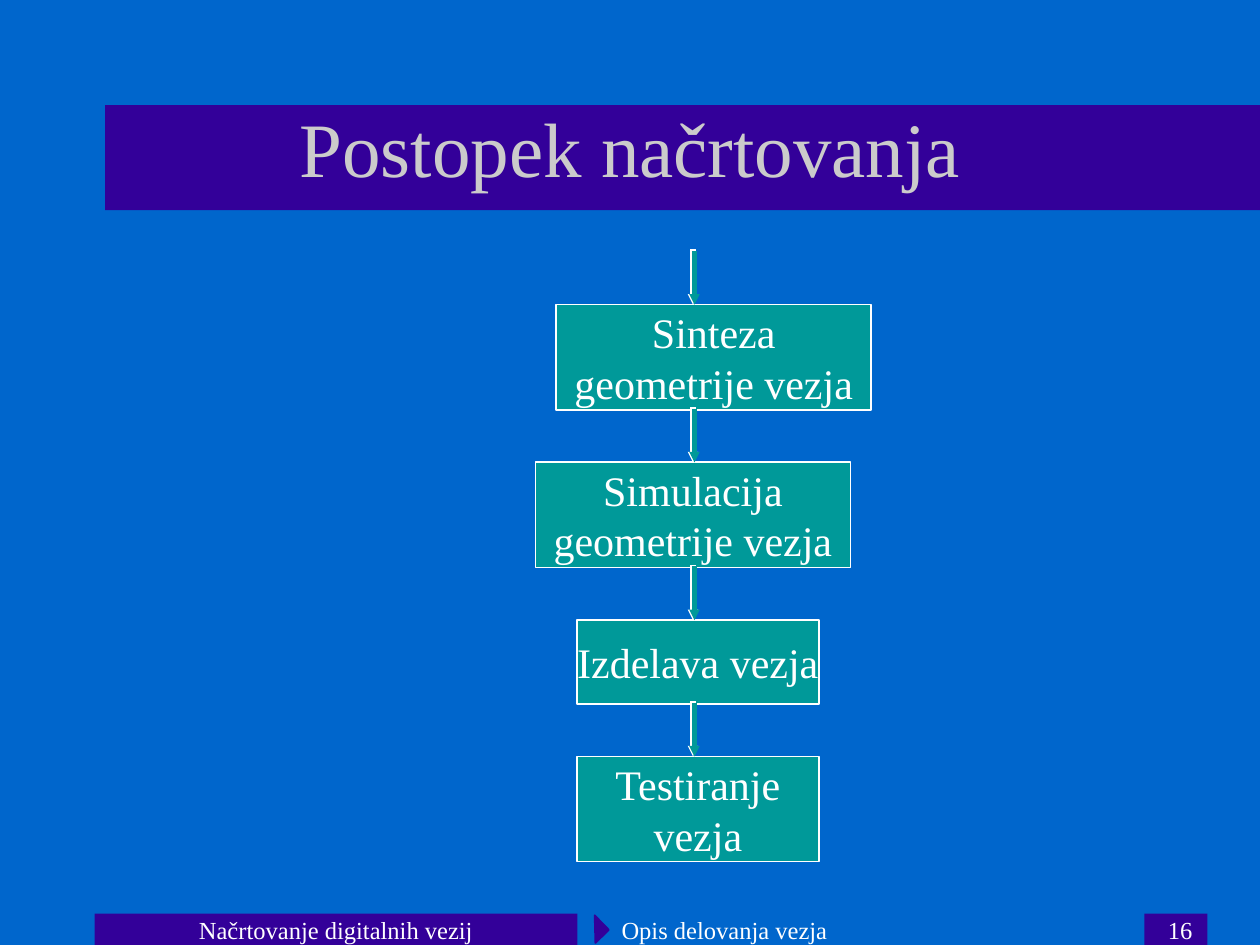
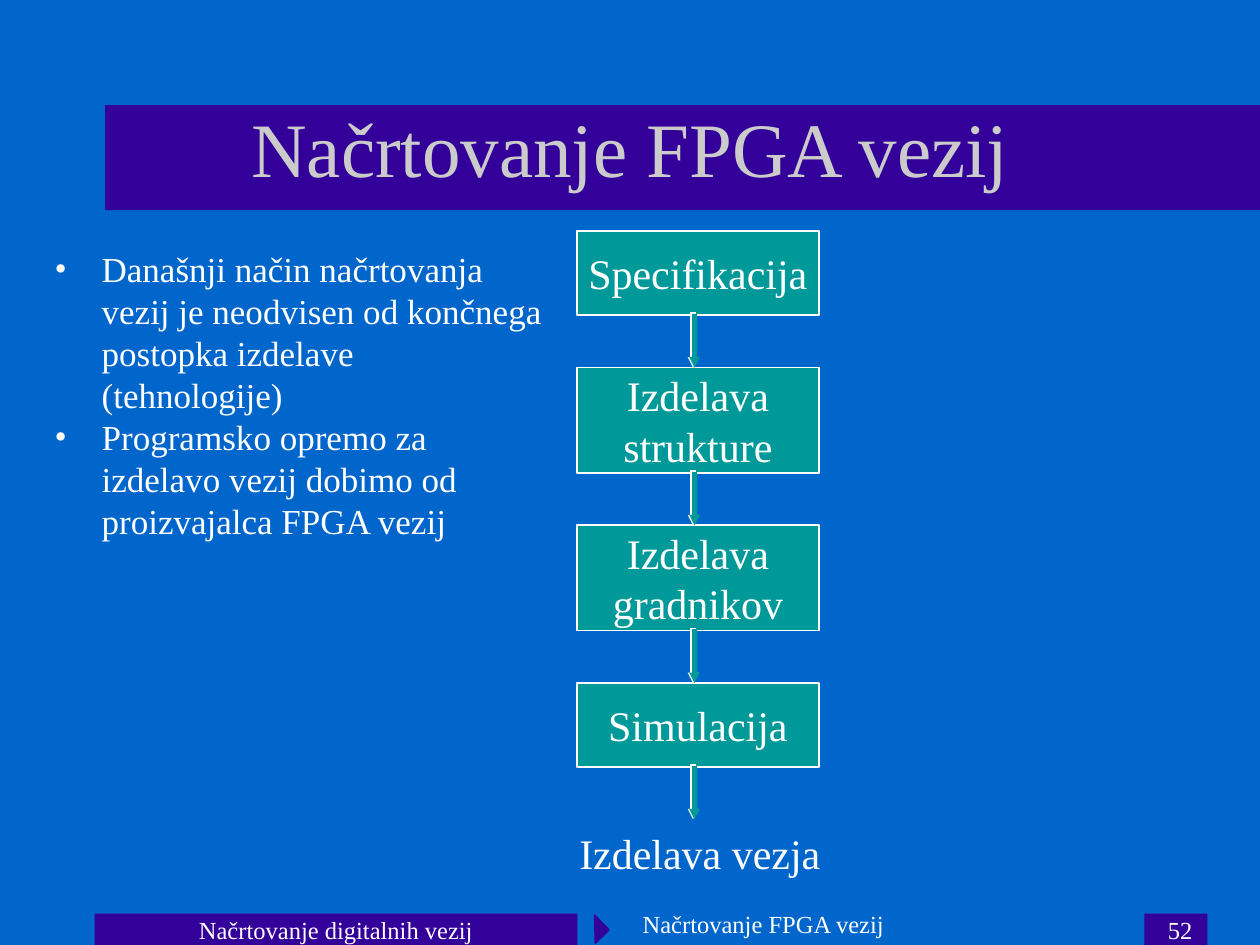
from dataclasses import dataclass

from lxml.etree import SubElement
from pptx import Presentation
from pptx.dml.color import RGBColor
from pptx.enum.shapes import MSO_CONNECTOR, MSO_SHAPE
from pptx.enum.text import MSO_ANCHOR, PP_ALIGN
from pptx.oxml.ns import qn
from pptx.shapes.autoshape import Shape
from pptx.shapes.connector import Connector
from pptx.slide import Slide
from pptx.text.text import TextFrame
from pptx.util import Cm, Pt

FONT = "Times New Roman"
BLUE, VIOLET, TEAL = "0066CC", "330099", "009999"
WHITE, GREY = "FFFFFF", "CBCBCB"
LEFT, MID, RIGHT = PP_ALIGN.LEFT, PP_ALIGN.CENTER, PP_ALIGN.RIGHT
AXIS = 13.97
GAP = 1.06
SHIFT = 0.03
INDENT = 0.95
HEIGHTS = {1: 1.69, 2: 2.12}


@dataclass(frozen=True)
class Area:
    """A place on the slide in centimetres."""

    left: float
    top: float
    width: float
    height: float


@dataclass(frozen=True)
class Step:
    """One box of the flow, placed by its centre line."""

    text: str
    mid: float = 14.07
    width: float = 4.87


@dataclass(frozen=True)
class Label:
    """A text with its place and format."""

    text: str
    area: Area
    size: int = 14
    color: str = WHITE
    align: PP_ALIGN = MID
    anchor: MSO_ANCHOR = MSO_ANCHOR.MIDDLE
    wrap: bool = True
    bullet: bool = False


BANDS = (
    Area(23.07, 18.42, 1.27, 0.63),
    Area(1.91, 18.42, 9.73, 0.63),
    Area(2.12, 2.12, 23.28, 2.12),
)
MARK = Area(11.79, 18.54, 0.41, 0.38)


def rgb(code: str) -> RGBColor:
    """Turn a hex string into a colour."""
    return RGBColor.from_string(code)


def span(area: Area) -> tuple[Cm, Cm, Cm, Cm]:
    """Give the lengths that python-pptx expects."""
    return Cm(area.left), Cm(area.top), Cm(area.width), Cm(area.height)


def write(frame: TextFrame, text: str, *, size: int, color: str = WHITE,
          align: PP_ALIGN = MID, anchor: MSO_ANCHOR = MSO_ANCHOR.MIDDLE,
          wrap: bool = True, bullet: bool = False) -> None:
    """Fill a frame with one paragraph for each line of text."""
    frame.word_wrap = wrap
    frame.vertical_anchor = anchor
    for rank, line in enumerate(text.split("\n")):
        para = frame.add_paragraph() if rank else frame.paragraphs[0]
        para.alignment = align
        run = para.add_run()
        run.text = line
        run.font.name = FONT
        run.font.size = Pt(size)
        run.font.color.rgb = rgb(color)
        if bullet:
            props = para._p.get_or_add_pPr()
            props.set("marL", str(Cm(INDENT)))
            props.set("indent", str(-Cm(INDENT)))
            SubElement(props, qn("a:buFont"), typeface=FONT)
            SubElement(props, qn("a:buChar"), char="•")


def add_label(slide: Slide, label: Label) -> None:
    """Place a text box."""
    frame = slide.shapes.add_textbox(*span(label.area)).text_frame
    write(frame, label.text, size=label.size, color=label.color,
          align=label.align, anchor=label.anchor, wrap=label.wrap,
          bullet=label.bullet)


def add_form(slide: Slide, area: Area, fill: str, line: str | None = None,
             kind: MSO_SHAPE = MSO_SHAPE.RECTANGLE) -> Shape:
    """Draw a flat preset shape."""
    form = slide.shapes.add_shape(kind, *span(area))
    form.shadow.inherit = False
    form.fill.solid()
    form.fill.fore_color.rgb = rgb(fill)
    if line:
        form.line.color.rgb = rgb(line)
        form.line.width = Pt(1)
    else:
        form.line.fill.background()
    return form


def add_line(slide: Slide, top: float, shift: float, color: str) -> Connector:
    """Draw a downward arrow on the axis."""
    side = Cm(AXIS + shift)
    link = slide.shapes.add_connector(
        MSO_CONNECTOR.STRAIGHT, side, Cm(top + shift), side, Cm(top + GAP))
    link.line.color.rgb = rgb(color)
    link.line.width = Pt(3)
    line = link.line._get_or_add_ln()
    line.set("cap", "sq")
    SubElement(line, qn("a:tailEnd"), type="triangle", w="sm", len="sm")
    SubElement(link._element.spPr, qn("a:effectLst"))
    return link


def add_arrow(slide: Slide, top: float, start: Shape | None,
              end: Shape | None) -> None:
    """Draw a white arrow with a teal one on it."""
    link = add_line(slide, top, 0, WHITE)
    if start:
        link.begin_connect(start, 2)
    if end:
        link.end_connect(end, 0)
    add_line(slide, top, SHIFT, TEAL)


def add_flow(slide: Slide, top: float, steps: list[Step],
             lead: bool = False, trail: bool = False) -> None:
    """Stack the boxes and link them with arrows."""
    tops = [top] if lead else []
    ends: list[Shape | None] = [None] if lead else []
    top += GAP if lead else 0
    for step in steps:
        height = HEIGHTS[step.text.count("\n") + 1]
        area = Area(step.mid - step.width / 2, top, step.width, height)
        box = add_form(slide, area, TEAL, WHITE)
        write(box.text_frame, step.text, size=24, wrap=False)
        ends.append(box if step.mid == AXIS else None)
        tops.append(top + height)
        top += height + GAP
    if trail:
        ends.append(None)
    for place, start, end in zip(tops, ends, ends[1:]):
        add_arrow(slide, place, start, end)


def add_page(deck: Presentation, title: str, page: int) -> Slide:
    """Add a slide with the shared bands, title and footer."""
    slide = deck.slides.add_slide(deck.slide_layouts[6])
    slide.background.fill.solid()
    slide.background.fill.fore_color.rgb = rgb(BLUE)
    for band in BANDS:
        add_form(slide, band, VIOLET)
    mark = add_form(slide, MARK, VIOLET, VIOLET, MSO_SHAPE.RIGHT_TRIANGLE)
    mark.rotation = 225.8
    add_label(slide, Label(str(page), Area(19.01, 18.33, 5.28, 0.64),
                           align=RIGHT, anchor=MSO_ANCHOR.TOP))
    add_label(slide, Label(title, Area(1.91, 1.59, 21.59, 2.74), 44, GREY))
    add_label(slide, Label("Načrtovanje digitalnih vezij",
                           Area(1.91, 18.33, 9.73, 0.84)))
    return slide


def add_point(slide: Slide, text: str, area: Area) -> None:
    """Place a bullet point."""
    add_label(slide, Label(text, area, 20, align=LEFT,
                           anchor=MSO_ANCHOR.TOP, bullet=True))


def main() -> None:
    """Build and save the deck."""
    deck = Presentation()
    deck.slide_width, deck.slide_height = Cm(25.4), Cm(19.05)

    slide = add_page(deck, "Postopek načrtovanja", 16)
    add_label(slide, Label("Opis delovanja vezja",
                           Area(12.28, 18.33, 9.73, 0.84), align=LEFT))
    add_flow(slide, 5.08, [
        Step("Sinteza\ngeometrije vezja", 14.39, 6.35),
        Step("Simulacija\ngeometrije vezja", AXIS, 6.35),
        Step("Izdelava vezja"),
        Step("Testiranje\nvezja"),
    ], lead=True)

    slide = add_page(deck, "Načrtovanje FPGA vezij", 52)
    add_flow(slide, 4.66, [
        Step("Specifikacija"),
        Step("Izdelava\nstrukture"),
        Step("Izdelava\ngradnikov"),
        Step("Simulacija"),
    ], trail=True)
    add_label(slide, Label("Izdelava vezja", Area(11.21, 16.56, 5.8, 1.27),
                           24, wrap=False))
    add_point(slide, "Današnji način načrtovanja vezij je neodvisen od "
              "končnega postopka izdelave (tehnologije)",
              Area(0.85, 4.87, 10.34, 3.18))
    add_point(slide, "Programsko opremo za izdelavo vezij dobimo od "
              "proizvajalca FPGA vezij", Area(0.85, 8.26, 9.74, 3.39))
    add_label(slide, Label("Načrtovanje FPGA vezij",
                           Area(12.6, 18.2, 5.58, 0.84), wrap=False))
    deck.save("out.pptx")


if __name__ == "__main__":
    main()
